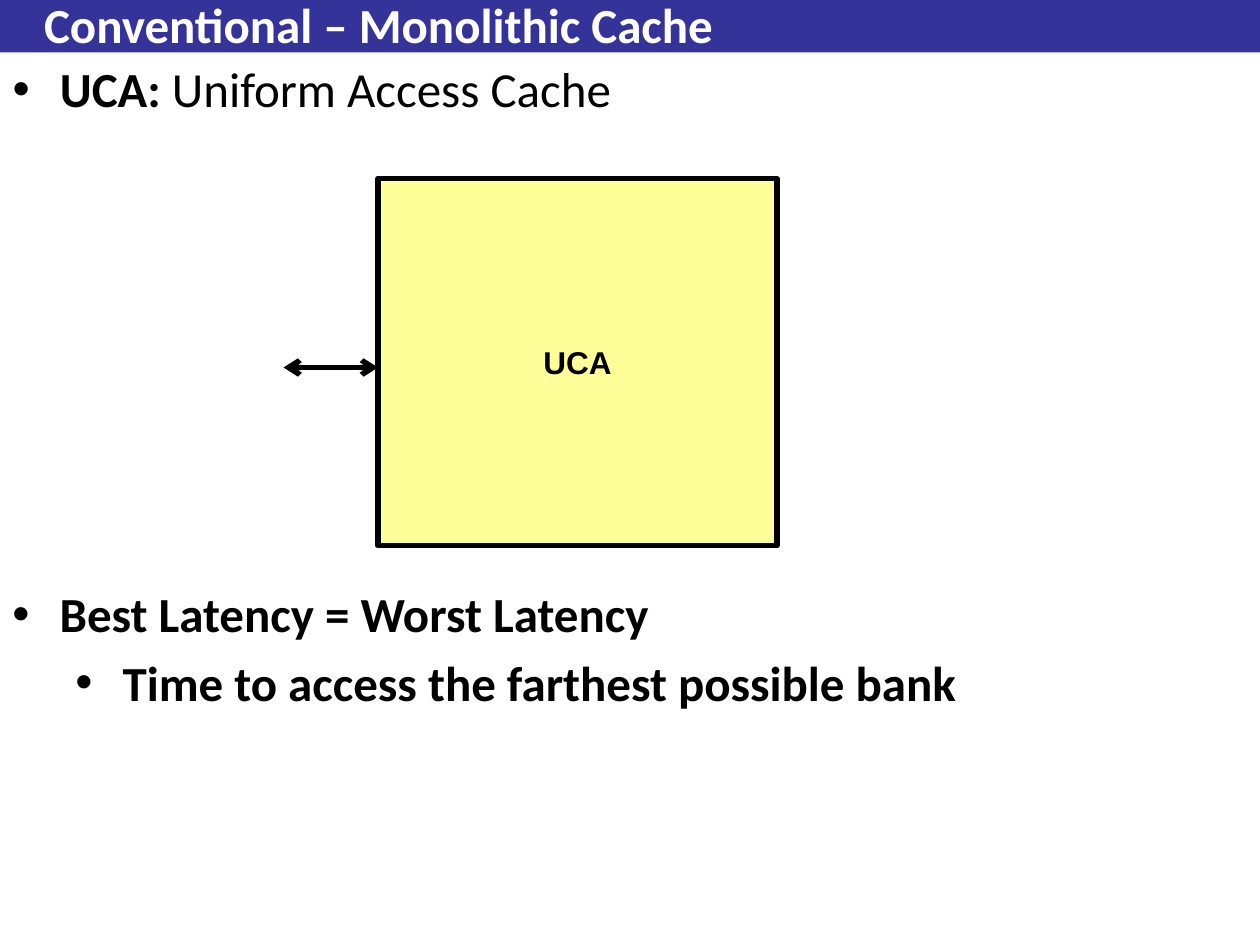
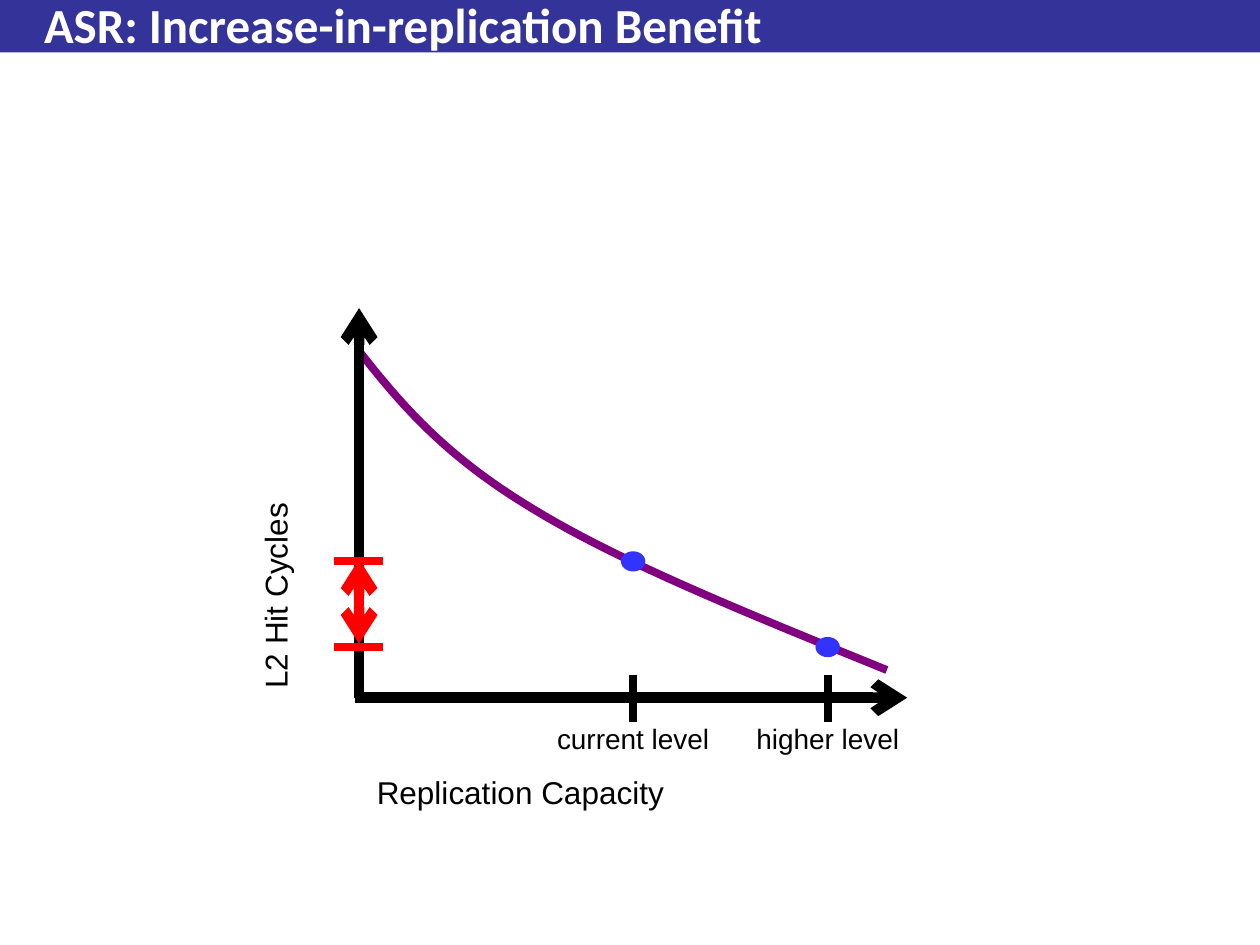
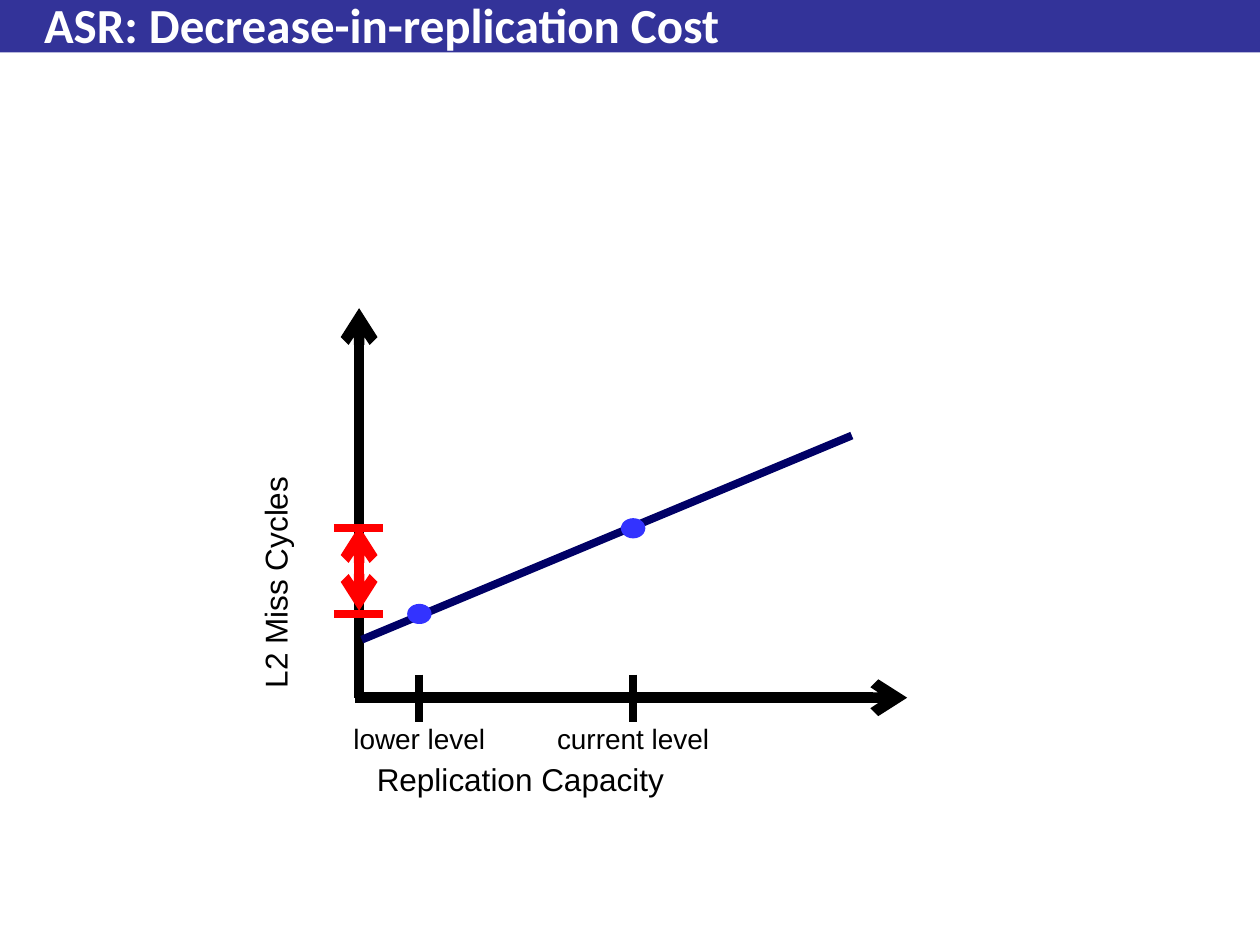
import pptx
import pptx.util
import pptx.dml.color
import pptx.enum.shapes
import pptx.enum.text
import pptx.oxml.xmlchemy
from dataclasses import dataclass

CACHE = {
    "title": "Conventional – Monolithic Cache",
    "intro": [(0, [("UCA: ", True), ("Uniform Access Cache", False)])],
    "block": "UCA",
    "findings": [
        (0, [("Best Latency = Worst Latency", True)]),
        (1, [("Time to access the farthest possible bank", True)]),
    ],
}
GRAPHS = [
    {
        "title": "ASR: Increase-in-replication Benefit",
        "vertical": ("L2 Hit Cycles", 33.8),
        "horizontal": ("Replication Capacity", 73),
        "levels": [("current level", 50, 35), ("higher level", 85.5, 13)],
        "curve": [(0, 89), (7.6, 75.4), (15.6, 62.1), (31.7, 48.5),
                  (47.8, 34.6), (72, 21), (96.3, 7.1)],
        "color": "800080",
    },
    {
        "title": "ASR: Decrease-in-replication Cost",
        "vertical": ("L2 Miss Cycles", 38.3),
        "horizontal": ("Replication Capacity", 71.8),
        "levels": [("current level", 50, 43.5), ("lower level", 11, 21.5)],
        "curve": [(0.5, 14.9), (89.9, 67.3)],
        "color": "000066",
    },
]


@dataclass(frozen=True)
class Theme:
    band: str = "333399"
    white: str = "FFFFFF"
    ink: str = "000000"
    block: str = "FFFF99"
    dot: str = "3333FF"
    change: str = "FF0000"
    heading_font: str = "Calibri"
    label_font: str = "Arial"
    heading: int = 28
    label: int = 18
    small: int = 16
    thin: float = 3
    medium: float = 4.5
    thick: float = 6


THEME = Theme()
COLUMNS, ROWS = 120, 90
WIDTH, HEIGHT = pptx.util.Inches(10), pptx.util.Inches(7.5)
BAND_ROWS = 5
ORIGIN = (34.2, 66.45)
AXES = (52.2, 37.1)
INDENT = 4.5
LEVEL_STEP = 6
ALIGN = pptx.enum.text.PP_ALIGN
ANCHOR = pptx.enum.text.MSO_ANCHOR
SHAPE = pptx.enum.shapes.MSO_SHAPE


def across(columns):
    return round(WIDTH * columns / COLUMNS)


def down(rows):
    return round(HEIGHT * rows / ROWS)


def box(left, top, width, height):
    return across(left), down(top), across(width), down(height)


def place(shape, *cells):
    shape.left, shape.top, shape.width, shape.height = box(*cells)
    return shape


def plot(x, y):
    return ORIGIN[0] + AXES[0] * x / 100, ORIGIN[1] - AXES[1] * y / 100


def rgb(color):
    return pptx.dml.color.RGBColor.from_string(color)


def element(tag, **attributes):
    node = pptx.oxml.xmlchemy.OxmlElement(tag)
    for name, value in attributes.items():
        node.set(name, value)
    return node


def write(shape, text, size=THEME.label, font=THEME.label_font, color=THEME.ink,
          bold=False, align=ALIGN.LEFT, anchor=ANCHOR.TOP, wrap=True):
    frame = shape.text_frame
    frame.auto_size = pptx.enum.text.MSO_AUTO_SIZE.NONE
    frame.word_wrap = wrap
    frame.vertical_anchor = anchor
    items = text if isinstance(text, list) else [(None, [(text, bold)])]
    for index, (level, runs) in enumerate(items):
        paragraph = frame.add_paragraph() if index else frame.paragraphs[0]
        paragraph.alignment = align
        if level is not None:
            add_bullet(paragraph, level, size)
        for words, heavy in runs:
            run = paragraph.add_run()
            run.text = words
            run.font.size = pptx.util.Pt(size)
            run.font.name = font
            run.font.bold = heavy
            run.font.color.rgb = rgb(color)
    return shape


def add_bullet(paragraph, level, size):
    paragraph.level = level
    paragraph.space_before = pptx.util.Pt(size * 0.2)
    properties = paragraph._p.get_or_add_pPr()
    properties.set("marL", str(across(INDENT + LEVEL_STEP * level)))
    properties.set("indent", str(-across(INDENT)))
    properties.append(element("a:buFont", typeface=THEME.label_font))
    properties.append(element("a:buChar", char="•"))


def add_shape(slide, kind, cells, fill, line=None, weight=0.75):
    shape = slide.shapes.add_shape(kind, *box(*cells))
    shape.shadow.inherit = False
    shape.fill.solid()
    shape.fill.fore_color.rgb = rgb(fill)
    if line:
        shape.line.color.rgb = rgb(line)
        shape.line.width = pptx.util.Pt(weight)
    else:
        shape.line.fill.background()
    return shape


def add_line(slide, start, end, color=THEME.ink, weight=THEME.medium, arrows=()):
    connector = slide.shapes.add_connector(
        pptx.enum.shapes.MSO_CONNECTOR.STRAIGHT,
        across(start[0]), down(start[1]), across(end[0]), down(end[1]))
    connector.line.color.rgb = rgb(color)
    connector.line.width = pptx.util.Pt(weight)
    properties = connector._element.spPr
    for name in arrows:
        properties.get_or_add_ln().append(element(f"a:{name}", type="arrow"))
    properties.append(element("a:effectLst"))


def add_label(slide, text, cells, **style):
    return write(slide.shapes.add_textbox(*box(*cells)), text, **style)


def add_slide(presentation, layout, title):
    slide = presentation.slides.add_slide(presentation.slide_layouts.get_by_name(layout))
    write(place(slide.shapes.title, 3, 0.6, 111, 3.4), title, size=THEME.heading,
          font=THEME.heading_font, color=THEME.white, bold=True, anchor=ANCHOR.MIDDLE)
    return slide


def add_band(presentation, slide):
    band = add_shape(slide, SHAPE.RECTANGLE, (0, 0, COLUMNS, BAND_ROWS), THEME.band)
    presentation.slide_master.shapes._spTree.insert(2, band._element)


def bezier(points, steps=24):
    for first in range(0, len(points) - 1, 3):
        a, b, c, d = points[first:first + 4]
        for step in range(1, steps + 1):
            t = step / steps
            u = 1 - t
            yield tuple(u**3 * p + 3 * u * u * t * q + 3 * u * t * t * r + t**3 * s
                        for p, q, r, s in zip(a, b, c, d))


def add_curve(slide, points, color):
    start, *rest = [(across(x), down(y)) for x, y in [points[0], *bezier(points)]]
    builder = slide.shapes.build_freeform(*start)
    builder.add_line_segments(rest, close=False)
    curve = builder.convert_to_shape()
    curve.shadow.inherit = False
    curve.fill.background()
    curve.line.color.rgb = rgb(color)
    curve.line.width = pptx.util.Pt(THEME.medium)


def add_level(slide, label, x, y):
    column, row = plot(x, y)
    base = ORIGIN[1]
    add_shape(slide, SHAPE.OVAL, (column - 1.1, row - 0.9, 2.2, 1.8), THEME.dot, THEME.dot)
    add_line(slide, (column, base - 2.2), (column, base + 2.3))
    add_label(slide, label, (column - 8.4, base + 1.7, 16.8, 4.4),
              size=THEME.small, align=ALIGN.CENTER, wrap=False)


def add_change(slide, heights):
    rows = sorted(plot(0, height)[1] for height in heights)
    center = ORIGIN[0]
    for row in rows:
        add_line(slide, (center - 2.4, row), (center + 2.3, row), color=THEME.change)
    add_line(slide, (center, rows[0] - 0.2), (center, rows[1] - 0.3), color=THEME.change,
             weight=THEME.thick, arrows=("headEnd", "tailEnd"))


def add_cache_slide(presentation, content):
    slide = add_slide(presentation, "Title and Content", content["title"])
    add_band(presentation, slide)
    style = {"size": THEME.heading, "font": THEME.heading_font}
    write(place(slide.placeholders[1], 0, BAND_ROWS, COLUMNS, 10), content["intro"], **style)
    block = add_shape(slide, SHAPE.RECTANGLE, (36, 17, 38, 35), THEME.block,
                      THEME.ink, THEME.thin)
    write(block, content["block"], bold=True, align=ALIGN.CENTER, anchor=ANCHOR.MIDDLE)
    add_line(slide, (27, 35), (36, 35), weight=THEME.thin, arrows=("headEnd", "tailEnd"))
    add_label(slide, content["findings"], (0, 55, COLUMNS, 23), **style)


def add_graph_slide(presentation, content):
    slide = add_slide(presentation, "Title Only", content["title"])
    column, row = ORIGIN
    points = [plot(*point) for point in content["curve"]]
    if len(points) > 2:
        add_curve(slide, points, content["color"])
    add_line(slide, plot(0, 100), ORIGIN, weight=THEME.thick, arrows=("headEnd",))
    add_line(slide, plot(100, 0), (column - 0.4, row), weight=THEME.thick,
             arrows=("headEnd",))
    name, length = content["vertical"]
    middle = row + 0.3 - length / 2
    vertical = add_label(slide, name, (27.6 - length / 2, middle - 3.8, length, 7.6))
    vertical.rotation = 270
    name, top = content["horizontal"]
    add_label(slide, name, (column + 0.5, top, 51, 7.6))
    if len(points) == 2:
        add_line(slide, *points, color=content["color"])
    for level in content["levels"]:
        add_level(slide, *level)
    add_change(slide, [height for _, _, height in content["levels"]])


def main():
    presentation = pptx.Presentation()
    presentation.slide_width, presentation.slide_height = WIDTH, HEIGHT
    add_cache_slide(presentation, CACHE)
    for graph in GRAPHS:
        add_graph_slide(presentation, graph)
    presentation.save("out.pptx")


if __name__ == "__main__":
    main()
